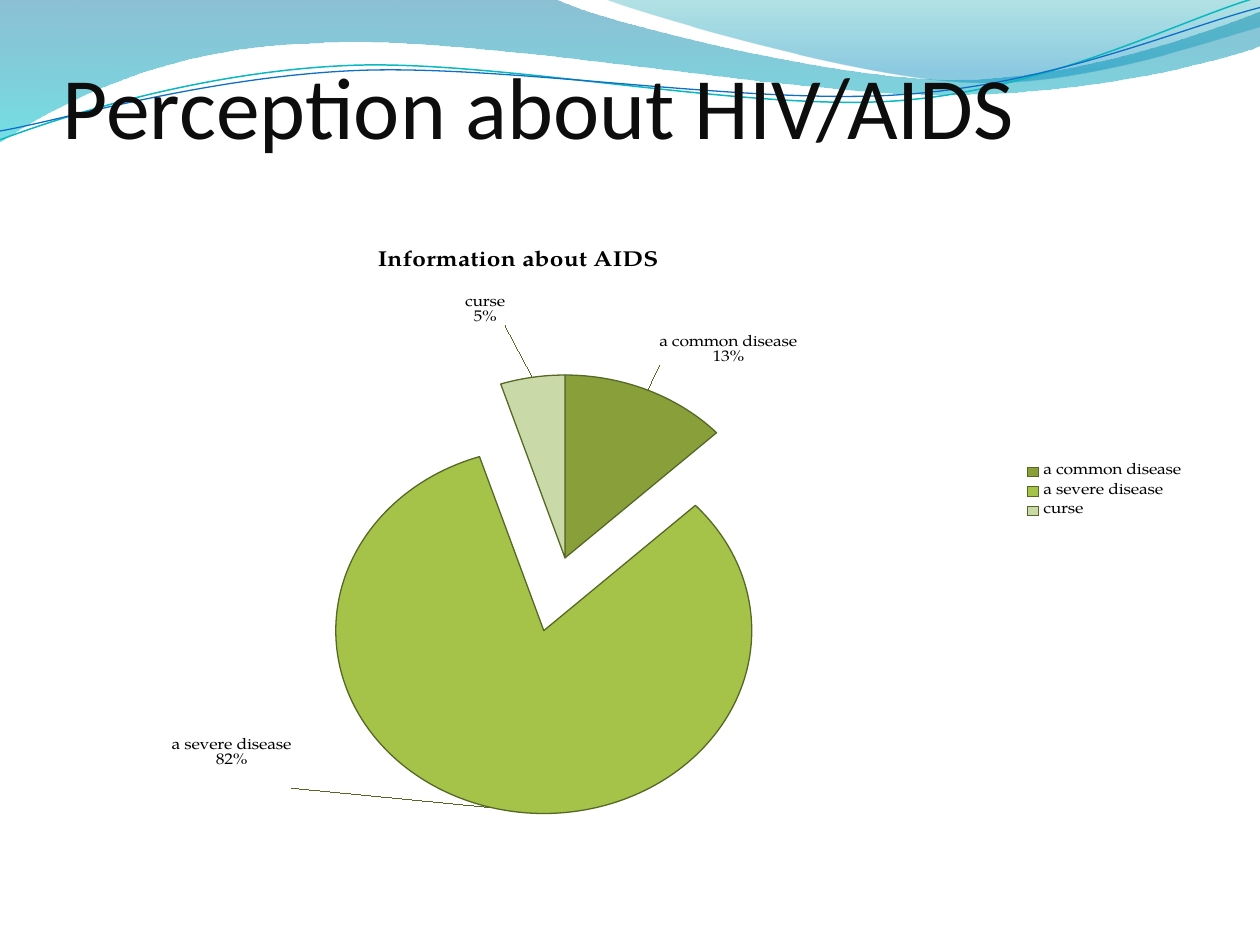
from dataclasses import dataclass
from typing import Optional

from lxml.etree import SubElement
from pptx import Presentation
from pptx.chart.data import CategoryChartData
from pptx.dml.color import RGBColor
from pptx.enum.chart import XL_CHART_TYPE as ChartType, XL_LEGEND_POSITION as LegendPosition
from pptx.enum.text import MSO_ANCHOR as Anchor
from pptx.oxml import parse_xml
from pptx.oxml.ns import nsdecls, qn
from pptx.util import Inches, Pt

WIDTH, HEIGHT = 10, 7.5
UNITS = 100  # outline grid units to the inch
BLACK = RGBColor(0, 0, 0)
TITLE_INK = RGBColor(0x0D, 0x0D, 0x0D)
OUTLINE = RGBColor(0x55, 0x68, 0x25)
DEEP_BLUE = RGBColor(0x00, 0x74, 0xA1)
CYAN = RGBColor(0x00, 0xC6, 0xCF)
TEAL = RGBColor(0x00, 0xA1, 0xA9)
BLUE = RGBColor(0x00, 0x8B, 0xBF)
LINE_TEAL = RGBColor(0x0A, 0xB8, 0xBF)
LINE_BLUE = RGBColor(0x0F, 0x6F, 0xC6)
CHART_FONT = "TeX Gyre Pagella"


@dataclass
class Stop:
    position: float
    color: RGBColor
    opacity: int


@dataclass
class Wave:
    """Outline in inches: two numbers are a corner, six a Bezier curve."""
    start: tuple
    segments: list
    stops: Optional[tuple] = None
    line: Optional[RGBColor] = None
    line_width: float = 0


@dataclass
class Slice:
    name: str
    value: int
    color: RGBColor
    explosion: int
    label_shift: tuple  # percent of the chart's size


WAVES = [
    Wave((0, 0), [
        (4.4, -0.01), (4.76, 0.17, 6.64, 0.63, 7.58, 0.63),
        (8.53, 0.63, 9.58, 0.26, 10, 0.09), (10.01, 0.36),
        (9.83, 0.44, 8.7, 0.76, 7.46, 0.75), (6.22, 0.75, 3.82, 0.28, 2.57, 0.34),
        (1.29, 0.36, 0.46, 0.83, -0.01, 1.13)],
        stops=(Stop(0, DEEP_BLUE, 45), Stop(1, CYAN, 55))),
    Wave((4.79, -0.01), [
        (5.09, 0.11, 6.82, 0.62, 7.69, 0.65), (8.56, 0.69, 9.61, 0.32, 10, 0.21), (10, 0)],
        stops=(Stop(0, TEAL, 30), Stop(0.8, BLUE, 45))),
    Wave((0, 1.11), [
        (0.48, 0.93, 1.58, 0.57, 2.77, 0.52), (3.95, 0.47, 5.93, 0.89, 7.13, 0.8),
        (8.33, 0.71, 9.38, 0.15, 9.98, -0.02)], line=LINE_TEAL, line_width=0.85),
    Wave((0, 1.04), [
        (0.47, 0.96, 1.64, 0.61, 2.83, 0.56), (4.03, 0.51, 5.97, 0.84, 7.17, 0.75),
        (8.36, 0.67, 9.41, 0.21, 10, 0.06)], line=LINE_BLUE, line_width=0.75),
]

SLICES = [
    Slice("a common disease", 13, RGBColor(0x89, 0xA0, 0x3A), 0, (0.8, -3.3)),
    Slice("a severe disease", 82, RGBColor(0xA5, 0xC2, 0x49), 41, (-18.2, -10.2)),
    Slice("curse", 5, RGBColor(0xCA, 0xD9, 0xA8), 0, (-2.4, -8.2)),
]


def share_box(left: float, top: float, width: float, height: float) -> tuple:
    """Turn percentages of the slide into lengths."""
    return tuple(Inches(share * side / 100) for share, side in
                 zip((left, top, width, height), (WIDTH, HEIGHT) * 2))


def set_format(target, values: dict) -> None:
    for name, value in values.items():
        setattr(target, name, value)


def bend_curves(shape, segments: list) -> None:
    """Join each run of three corners that stands for a curve."""
    corners = iter(list(shape.element.iter(qn("a:lnTo"))))
    for segment in segments:
        corner = next(corners)
        if len(segment) == 6:
            corner.tag = qn("a:cubicBezTo")
            for extra in (next(corners), next(corners)):
                corner.append(extra[0])
                extra.getparent().remove(extra)


def draw_wave(slide, wave: Wave) -> None:
    points = [(segment[i] * UNITS, segment[i + 1] * UNITS)
              for segment in wave.segments for i in range(0, len(segment), 2)]
    builder = slide.shapes.build_freeform(
        wave.start[0] * UNITS, wave.start[1] * UNITS, scale=Inches(1) / UNITS)
    builder.add_line_segments(points, close=wave.stops is not None)
    shape = builder.convert_to_shape()
    bend_curves(shape, wave.segments)
    shape.shadow.inherit = False
    if wave.stops is None:
        shape.fill.background()
        shape.line.color.rgb = wave.line
        shape.line.width = Pt(wave.line_width)
        return
    shape.line.fill.background()
    shape.fill.gradient()
    shape.fill.gradient_angle = 270
    for target, stop in zip(shape.fill.gradient_stops, wave.stops):
        target.position = stop.position
        target.color.rgb = stop.color
    for color, stop in zip(shape.element.spPr.iter(qn("a:srgbClr")), wave.stops):
        SubElement(color, qn("a:alpha")).set("val", str(stop.opacity * 1000))


def draw_title(slide, text: str) -> None:
    box = slide.shapes.add_textbox(*share_box(5, 0, 90, 16.67))
    set_format(box.text_frame, dict(
        word_wrap=True, vertical_anchor=Anchor.BOTTOM, margin_left=0,
        margin_right=0, margin_top=Inches(0.05), margin_bottom=0))
    span = box.text_frame.paragraphs[0].add_run()
    span.text = text
    set_format(span.font, dict(size=Pt(50), name="Calibri"))
    span.font.color.rgb = TITLE_INK


def layout_xml(modes: dict, **percents: float) -> str:
    """Manual layout from modes and percentages of the chart."""
    values = {**modes, **{key: share / 100 for key, share in percents.items()}}
    children = "".join(f'<c:{key} val="{value}"/>' for key, value in values.items())
    return f"<c:layout {nsdecls('c')}><c:manualLayout>{children}</c:manualLayout></c:layout>"


def label_xml(index: int, shift: tuple) -> str:
    flags = "".join(f'<c:show{name} val="{int(name in ("CatName", "Percent"))}"/>'
                    for name in ("LegendKey", "Val", "CatName", "SerName", "Percent", "BubbleSize"))
    return (f'<c:dLbl {nsdecls("c")}><c:idx val="{index}"/>{layout_xml({}, x=shift[0], y=shift[1])}'
            f'<c:dLblPos val="outEnd"/>{flags}<c:separator>\n</c:separator></c:dLbl>')


def place(element, before: str, modes: dict, **percents: float) -> None:
    """Put a manual layout in front of the named child."""
    for old in element.findall(qn("c:layout")):
        element.remove(old)
    element.find(qn(before)).addprevious(parse_xml(layout_xml(modes, **percents)))


def draw_pie(slide) -> None:
    data = CategoryChartData()
    data.categories = [part.name for part in SLICES]
    data.add_series("Series 1", [part.value for part in SLICES])
    chart = slide.shapes.add_chart(
        ChartType.PIE, *share_box(8.3, 23.33, 86.7, 66), data).chart
    set_format(chart.font, dict(size=Pt(10), name=CHART_FONT))
    chart.font.color.rgb = BLACK

    # Heading and legend
    chart.has_title = True
    span = chart.chart_title.text_frame.paragraphs[0].add_run()
    span.text = "Information about AIDS"
    set_format(span.font, dict(size=Pt(14), bold=True, name=CHART_FONT))
    span.font.color.rgb = BLACK
    chart.has_legend = True
    set_format(chart.legend, dict(position=LegendPosition.RIGHT, include_in_layout=False))

    # Slices
    plot = chart.plots[0]
    plot.vary_by_categories = True
    series = plot.series[0]
    series.format.line.color.rgb = OUTLINE
    for index, part in enumerate(SLICES):
        point = series.points[index]
        point.format.fill.solid()
        point.format.fill.fore_color.rgb = part.color
        point.format.line.color.rgb = OUTLINE
        point.format.line.width = Pt(0.75)
        if part.explosion:
            point.format.fill._xPr.addprevious(
                parse_xml(f'<c:explosion {nsdecls("c")} val="{part.explosion}"/>'))

    # Labels
    labels = series.data_labels
    set_format(labels, dict(show_category_name=True, show_percentage=True,
                            show_value=False, show_legend_key=False))
    for index, part in enumerate(SLICES):
        labels._element.insert(index, parse_xml(label_xml(index, part.label_shift)))

    # Positions as percentages of the chart
    root = chart.element.find(qn("c:chart"))
    edges = dict(xMode="edge", yMode="edge")
    place(root.find(qn("c:title")), "c:overlay", edges, x=24.6, y=4.2)
    place(root.find(qn("c:legend")), "c:overlay", edges, x=84, y=43.7)
    place(root.find(qn("c:plotArea")), "c:pieChart", dict(layoutTarget="inner", **edges),
          x=13.4, y=28.2, w=57.5, h=66.7)


def main() -> None:
    deck = Presentation()
    set_format(deck, dict(slide_width=Inches(WIDTH), slide_height=Inches(HEIGHT)))
    page = deck.slides.add_slide(deck.slide_layouts[6])
    for wave in WAVES:
        draw_wave(page, wave)
    draw_title(page, "Perception about HIV/AIDS")
    draw_pie(page)
    deck.save("out.pptx")


if __name__ == "__main__":
    main()
